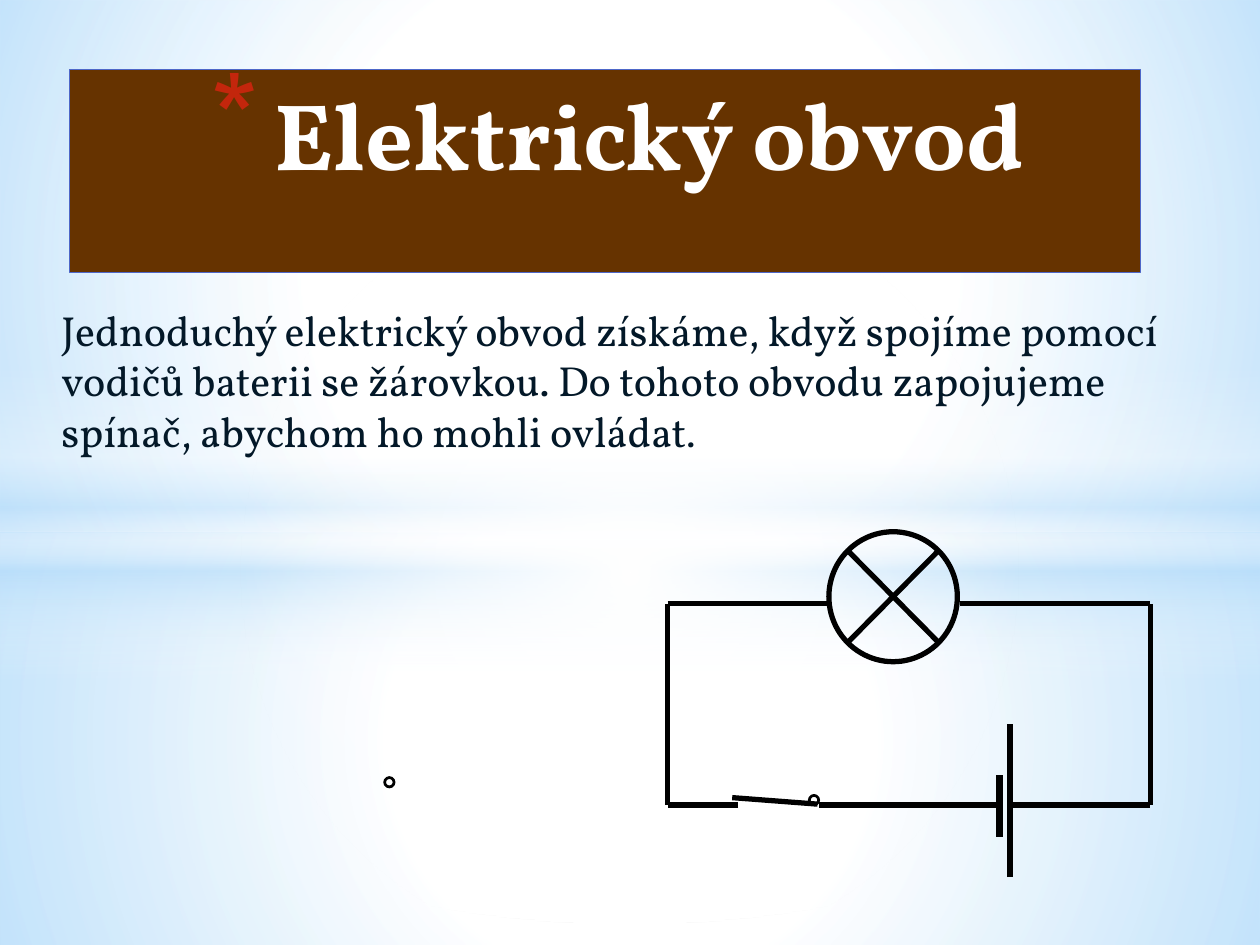
from lxml.etree import SubElement
from pptx import Presentation
from pptx.dml.color import RGBColor
from pptx.enum.shapes import MSO_CONNECTOR, MSO_SHAPE
from pptx.enum.text import MSO_ANCHOR, PP_ALIGN
from pptx.oxml import parse_xml
from pptx.oxml.ns import nsdecls, qn
from pptx.util import Cm, Pt

WHITE = RGBColor(0xFF, 0xFF, 0xFF)
BLACK = RGBColor(0x00, 0x00, 0x00)
SKY = RGBColor(0xB4, 0xDC, 0xFA)
BROWN = RGBColor(0x66, 0x33, 0x00)
BLUE = RGBColor(0x4E, 0x67, 0xC8)
RED = RGBColor(0xC3, 0x26, 0x0C)
NAVY = RGBColor(0x03, 0x18, 0x28)

FONT = "Vollkorn"
TITLE_FORMAT = {"name": FONT, "size": Pt(54), "bold": True}
BODY_FORMAT = {"name": FONT, "size": Pt(24)}
STOP_FORMAT = {"name": FONT, "size": Pt(22)}

CIRCLE = '<a:path path="circle"><a:fillToRect l="50000" t="50000" r="50000" b="50000"/></a:path>'
DOWNWARD = '<a:lin ang="5400000" scaled="0"/>'

LEFT, RIGHT, TOP, BOTTOM = 13.46, 23.19, 12.17, 16.23
LAMP_LEFT, LAMP_RIGHT, LAMP_TOP, LAMP_BOTTOM = 17.09, 18.92, 11.1, 12.95
CELL_MINUS, CELL_PLUS = 20.15, 20.36
WIRES = [
    (LEFT, BOTTOM, LEFT, TOP),
    (LEFT, TOP, 16.71, TOP),
    (19.35, TOP, RIGHT, TOP),
    (RIGHT, BOTTOM, RIGHT, TOP),
    (CELL_PLUS, BOTTOM, RIGHT, BOTTOM),
    (CELL_MINUS, BOTTOM, 16.51, BOTTOM),
    (14.88, BOTTOM, LEFT, BOTTOM),
    (14.76, 16.08, 16.48, 16.21),
    (LAMP_RIGHT, LAMP_TOP, LAMP_LEFT, LAMP_BOTTOM),
    (LAMP_LEFT, LAMP_TOP, LAMP_RIGHT, LAMP_BOTTOM),
]
CELL_PLATES = [
    (CELL_PLUS, 17.68, CELL_PLUS, 14.6),
    (CELL_MINUS, 16.87, CELL_MINUS, 15.62),
]


class SlideBuilder:
    """Hold the style and the current slide, and draw each kind of element."""

    def __init__(self, presentation):
        self.slide = presentation.slides.add_slide(presentation.slide_layouts[6])
        self.shapes = self.slide.shapes

    def start_group(self):
        self.shapes = self.slide.shapes.add_group_shape().shapes

    def end_group(self):
        self.shapes = self.slide.shapes

    def shape(self, kind, box, fill=None, line=None, width=1):
        shape = self.shapes.add_shape(kind, *map(Cm, box))
        shape.shadow.inherit = False
        if fill is None:
            shape.fill.background()
        else:
            shape.fill.solid()
            shape.fill.fore_color.rgb = fill
        if line is None:
            shape.line.fill.background()
        else:
            shape.line.color.rgb = line
            shape.line.width = Pt(width)
        return shape

    def glow(self, kind, box, stops, direction):
        properties = self.shape(kind, box).element.spPr
        marks = "".join(
            f'<a:gs pos="{position * 1000}"><a:srgbClr val="{color}">'
            f'<a:alpha val="{opacity * 1000}"/></a:srgbClr></a:gs>'
            for position, color, opacity in stops
        )
        gradient = parse_xml(
            f'<a:gradFill {nsdecls("a")} rotWithShape="1">'
            f"<a:gsLst>{marks}</a:gsLst>{direction}</a:gradFill>"
        )
        properties.replace(properties.find(qn("a:noFill")), gradient)

    def ring(self, left, top, fill=None):
        shape = self.shape(MSO_SHAPE.DONUT, (left, top, 0.2, 0.2), fill, BLACK, 1.25)
        shape.adjustments[0] = 0.055

    def wire(self, ends, width=3):
        connector = self.shapes.add_connector(MSO_CONNECTOR.STRAIGHT, *map(Cm, ends))
        connector.line.color.rgb = BLACK
        connector.line.width = Pt(width)
        SubElement(connector.element.spPr, qn("a:effectLst"))

    def run(self, paragraph, text, color, format_values):
        run = paragraph.add_run()
        run.text = text
        for name, value in format_values.items():
            setattr(run.font, name, value)
        run.font.color.rgb = color

    def title(self, box, text):
        frame = self.shape(MSO_SHAPE.RECTANGLE, box, BROWN, BLUE, 0.75).text_frame
        frame.word_wrap = True
        frame.vertical_anchor = MSO_ANCHOR.TOP
        paragraph = frame.paragraphs[0]
        paragraph.alignment = PP_ALIGN.CENTER
        properties = paragraph._p.get_or_add_pPr()
        properties.set("marL", str(Cm(1.78)))
        properties.set("indent", str(Cm(-1.27)))
        bullet_color = SubElement(properties, qn("a:buClr"))
        SubElement(bullet_color, qn("a:srgbClr"), val=str(RED))
        SubElement(properties, qn("a:buSzPct"), val="128000")
        SubElement(properties, qn("a:buChar"), char="*")
        self.run(paragraph, text, WHITE, TITLE_FORMAT)

    def body(self, box, text, stop):
        frame = self.shapes.add_textbox(*map(Cm, box)).text_frame
        frame.word_wrap = True
        frame.margin_top = Cm(0.2)
        paragraph = frame.paragraphs[0]
        paragraph.space_after = Pt(3)
        self.run(paragraph, text, NAVY, BODY_FORMAT)
        self.run(paragraph, stop, NAVY, STOP_FORMAT)


def main():
    presentation = Presentation()
    presentation.slide_width, presentation.slide_height = Cm(25.4), Cm(19.05)
    builder = SlideBuilder(presentation)

    builder.glow(MSO_SHAPE.RECTANGLE, (0, 10.74, 25.4, 8.31),
                 [(0, WHITE, 91), (37, WHITE, 76), (100, SKY, 79)], CIRCLE)
    builder.glow(MSO_SHAPE.RECTANGLE, (0, 0, 25.4, 10.74),
                 [(0, WHITE, 89), (48, WHITE, 62), (100, SKY, 79)], CIRCLE)
    builder.glow(MSO_SHAPE.RECTANGLE, (0, 7.37, 25.4, 6.35),
                 [(0, WHITE, 0), (29, WHITE, 30), (45, SKY, 40),
                  (55, WHITE, 26), (65, SKY, 60), (100, WHITE, 0)], DOWNWARD)
    builder.glow(MSO_SHAPE.OVAL, (0, 4.45, 25.4, 14.17),
                 [(0, WHITE, 100), (54, WHITE, 0)], CIRCLE)

    builder.body((0.99, 5.94, 23.42, 5.56),
                 "Jednoduchý elektrický obvod získáme, když spojíme pomocí vodičů "
                 "baterii se žárovkou. Do tohoto obvodu zapojujeme spínač, "
                 "abychom ho mohli ovládat", ".")
    builder.title((1.4, 1.4, 21.59, 4.09), "Elektrický obvod")

    builder.start_group()
    builder.ring(16.31, 16.03)
    builder.shape(MSO_SHAPE.OVAL, (16.71, 10.72, 2.59, 2.62), line=BLACK, width=3)
    for ends in WIRES:
        builder.wire(ends)
    for ends in CELL_PLATES:
        builder.wire(ends, 3.5)
    builder.end_group()
    builder.ring(7.75, 15.67, BLACK)

    presentation.save("out.pptx")


if __name__ == "__main__":
    main()
